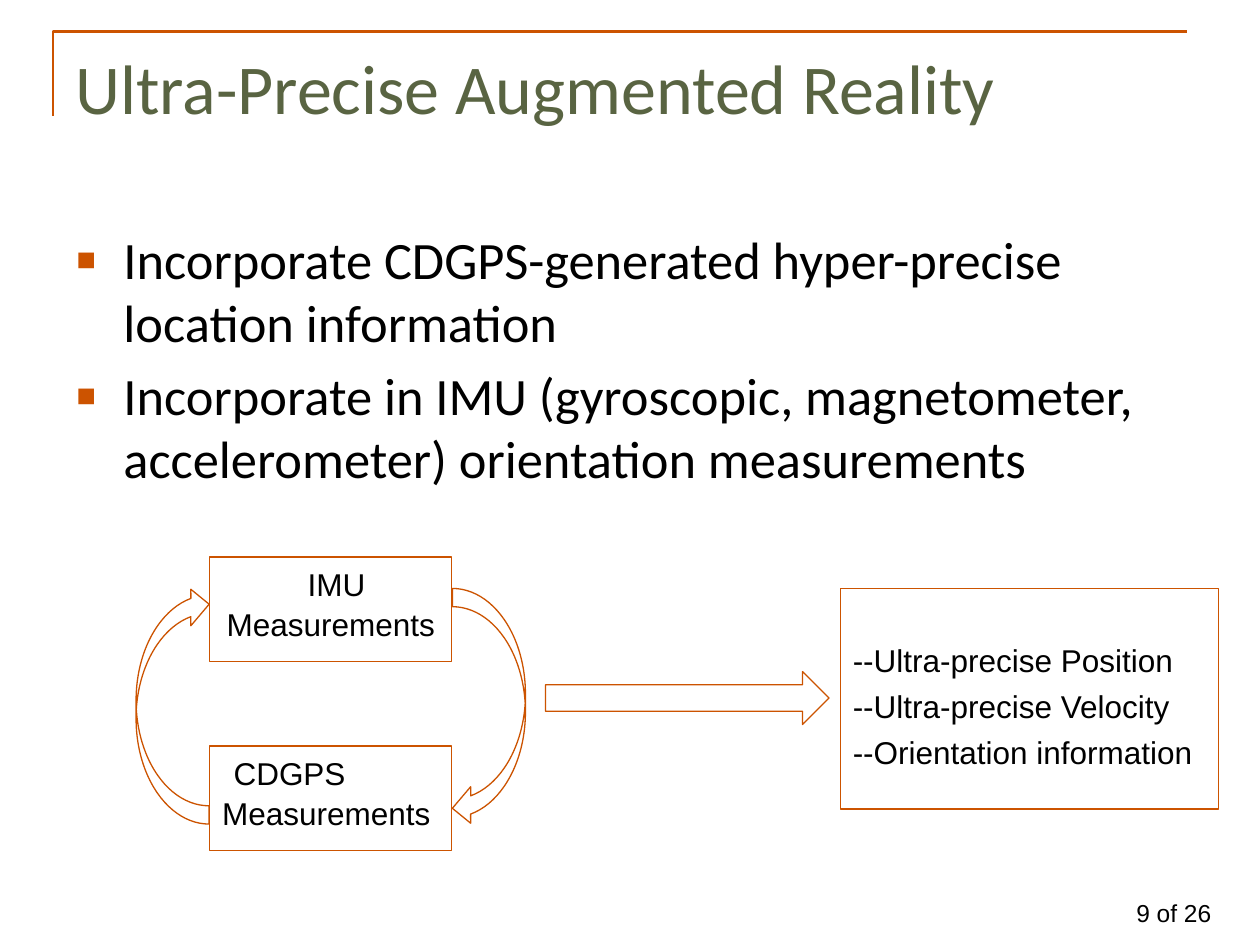
from dataclasses import dataclass
from lxml.etree import SubElement
from pptx import Presentation
from pptx.dml.color import RGBColor
from pptx.enum.shapes import MSO_SHAPE
from pptx.enum.text import MSO_ANCHOR, MSO_AUTO_SIZE, PP_ALIGN
from pptx.oxml.ns import qn
from pptx.util import Inches, Pt


@dataclass(frozen=True)
class Theme:
    accent: RGBColor = RGBColor(0xCC, 0x53, 0x00)
    head: RGBColor = RGBColor(0x59, 0x64, 0x42)
    ink: RGBColor = RGBColor(0, 0, 0)
    sans: str = "Calibri"
    plain: str = "Arial"
    title: int = 40
    body: int = 30
    label: int = 18
    page: int = 14
    rule: float = 1.5
    edge: float = 0.75


theme = Theme()


def place(shape, box):
    shape.left, shape.top, shape.width, shape.height = map(Inches, box)


def style(frame, face, size, color, align=PP_ALIGN.LEFT):
    frame.word_wrap = True
    frame.auto_size = MSO_AUTO_SIZE.NONE
    frame.vertical_anchor = MSO_ANCHOR.TOP
    for part in frame.paragraphs:
        part.alignment = align
        for run in part.runs:
            font = run.font
            font.name, font.size = face, Pt(size)
            font.color.rgb = color


def space(frame, size):
    for part in frame.paragraphs[1:]:
        part.space_before = Pt(size * 0.2)


def outline(shape, weight):
    shape.shadow.inherit = False
    shape.fill.background()
    shape.line.color.rgb = theme.accent
    shape.line.width = Pt(weight)


def draw(slide, kind, box, turn=0):
    shape = slide.shapes.add_shape(kind, *map(Inches, box))
    outline(shape, theme.edge)
    shape.rotation = turn
    return shape


def add_frame(slide, box):
    left, top, width, height = map(Inches, box)
    pen = slide.shapes.build_freeform(left, top + height)
    pen.add_line_segments([(left, top), (left + width, top)], close=False)
    outline(pen.convert_to_shape(), theme.rule)


def add_title(slide, box, text):
    title = slide.shapes.title
    place(title, box)
    title.text_frame.text = text
    style(title.text_frame, theme.sans, theme.title, theme.head)


def add_bullet(part):
    props = part._p.get_or_add_pPr()
    props.set("marL", str(Inches(0.38)))
    props.set("indent", str(Inches(-0.38)))
    tint = SubElement(props, qn("a:buClr"))
    SubElement(tint, qn("a:srgbClr"), val=str(theme.accent))
    SubElement(props, qn("a:buSzPct"), val="120000")
    SubElement(props, qn("a:buFont"), typeface=theme.plain)
    SubElement(props, qn("a:buChar"), char="▪")


def add_list(slide, box, lines):
    body = slide.placeholders[1]
    place(body, box)
    frame = body.text_frame
    frame.text = "\n".join(lines)
    for part in frame.paragraphs:
        add_bullet(part)
        part.space_before = Pt(0)
    space(frame, theme.body)
    style(frame, theme.sans, theme.body, theme.ink)


def add_label(slide, box, text, align=PP_ALIGN.LEFT):
    shape = draw(slide, MSO_SHAPE.RECTANGLE, box)
    frame = shape.text_frame
    frame.text = text
    style(frame, theme.plain, theme.label, theme.ink, align)
    space(frame, theme.label)
    for part in frame.paragraphs:
        part.line_spacing = 1.05
    return frame


def add_cycle(slide, box):
    left, top, width, height = box
    wide, high = 1.92, 0.83
    mid = left + (width - wide) / 2
    nodes = (
        ("IMU Measurements", top, PP_ALIGN.CENTER),
        ("CDGPS Measurements", top + height - high, PP_ALIGN.LEFT),
    )
    for text, y, align in nodes:
        frame = add_label(slide, (mid, y, wide, high), text, align)
        props = frame.paragraphs[0]._p.get_or_add_pPr()
        props.set("indent", str(Inches(0.09)))
    span, deep = 1.89, 0.58
    far = left + width - deep
    for x, drop, turn in ((left, 0.23, 270), (far, 0.25, 90)):
        shift = (span - deep) / 2
        spot = (x - shift, top + drop + shift, span, deep)
        draw(slide, MSO_SHAPE.CURVED_DOWN_ARROW, spot, turn)


def add_output(slide, box, lines):
    left, top, width, height = box
    wide = 3
    draw(slide, MSO_SHAPE.RIGHT_ARROW, (left, top + 0.66, 2.25, 0.42))
    spot = (left + width - wide, top, wide, height)
    frame = add_label(slide, spot, "\n".join(lines))
    frame.margin_top = Inches(0.4)


def add_page(slide, box, text):
    note = slide.shapes.add_textbox(*map(Inches, box))
    note.text_frame.text = text
    style(note.text_frame, theme.plain, theme.page, theme.ink)


def main():
    deck = Presentation()
    deck.slide_width, deck.slide_height = Inches(10), Inches(7.5)
    slide = deck.slides.add_slide(deck.slide_layouts[1])
    add_frame(slide, (0.42, 0.25, 9, 0.67))
    add_page(slide, (8.92, 7.08, 1, 0.34), "9 of 26")
    add_list(slide, (0.5, 1.75, 8.92, 5.5), (
        "Incorporate CDGPS-generated hyper-precise location information",
        "Incorporate in IMU (gyroscopic, magnetometer, accelerometer) "
        "orientation measurements",
    ))
    add_title(slide, (0.5, 0.3, 9, 1.25), "Ultra-Precise Augmented Reality")
    add_cycle(slide, (1.08, 4.42, 3.09, 2.33))
    add_output(slide, (4.33, 4.67, 5.34, 1.75), (
        "--Ultra-precise Position",
        "--Ultra-precise Velocity",
        "--Orientation information",
    ))
    deck.save("out.pptx")


if __name__ == "__main__":
    main()
